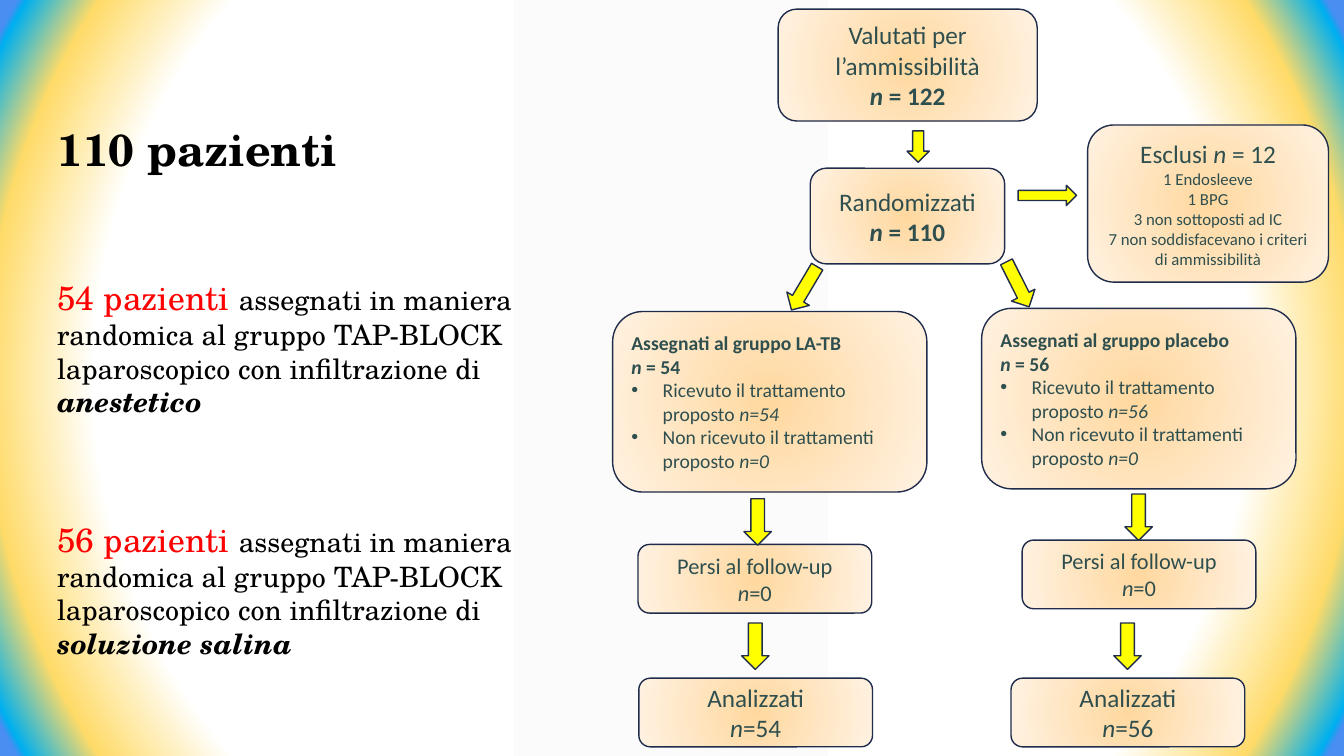
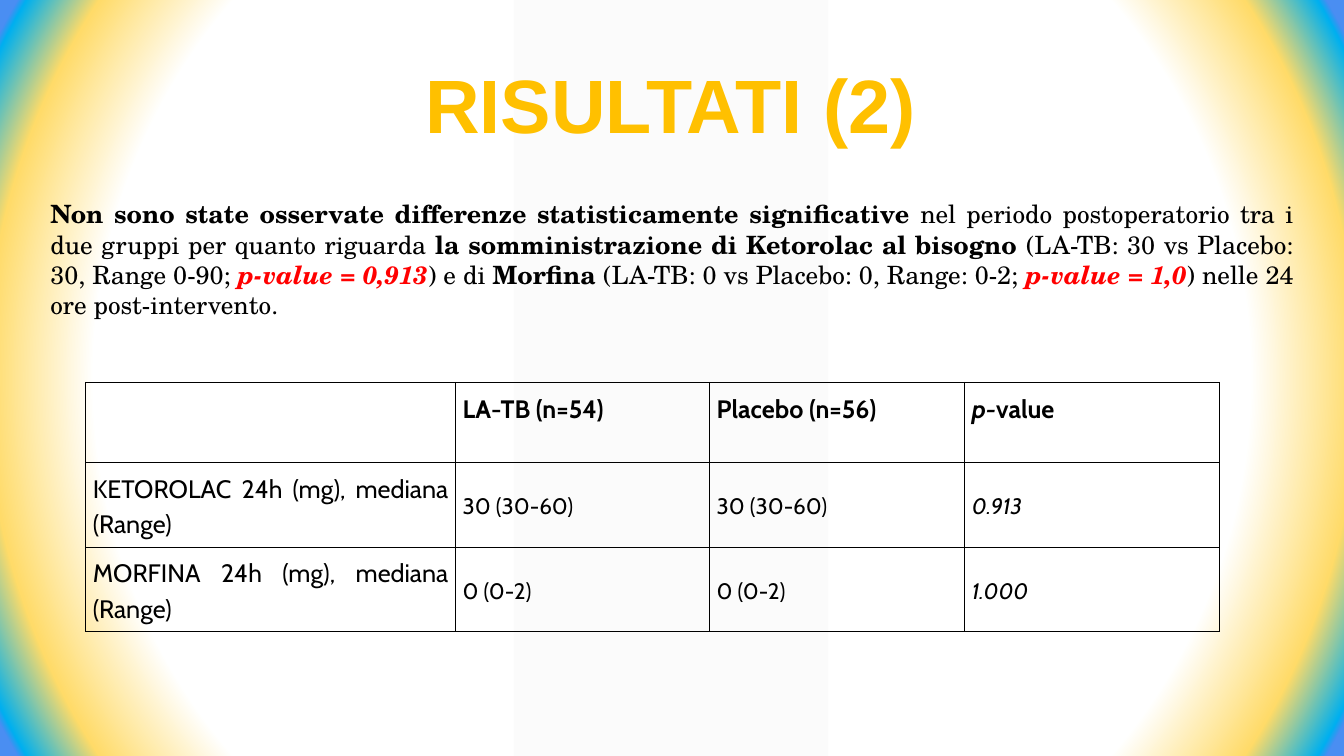
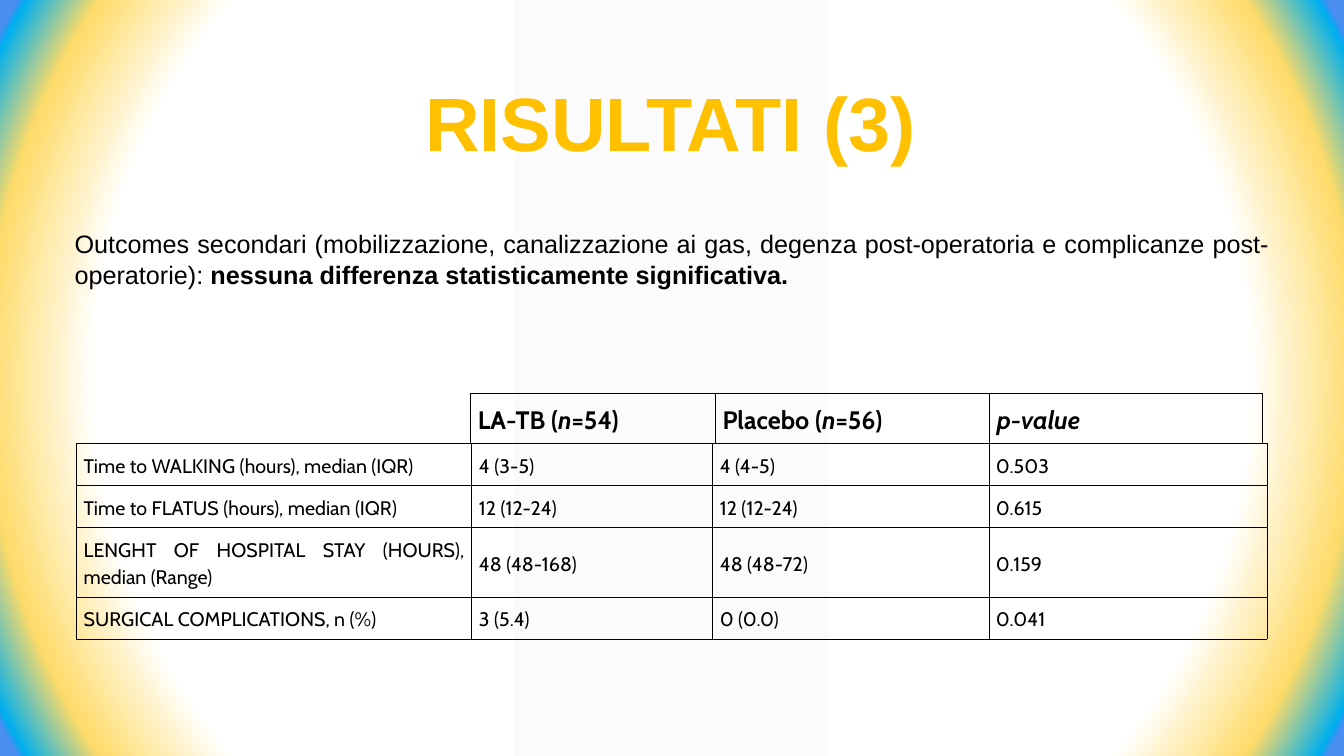
"""Build three slides on a randomised trial: patient flow and two result tables."""
from lxml.etree import SubElement
from pptx import Presentation
from pptx.dml.color import RGBColor
from pptx.enum.shapes import MSO_SHAPE
from pptx.enum.text import MSO_ANCHOR, MSO_AUTO_SIZE, PP_ALIGN
from pptx.oxml import parse_xml
from pptx.oxml.ns import nsdecls, qn
from pptx.util import Cm, Pt

HUES = {
    "black": "000000", "red": "FF0000", "gold": "FFC000", "slate": "2F4F4F",
    "navy": "202C4B", "yellow": "FFFF00", "pale": "F2F2F2", "white": "FFFFFF",
    "sand": "FFDB69", "sky": "00B0F0", "blue": "4A8EF2",
    "peach": "FFD89F", "cream": "FFF2E2",
}
SERIF, SANS, BODY, GRID = "TeX Gyre Schola", "Arial", "Calibri", "Cabin"
LEFT, MID, FULL = PP_ALIGN.LEFT, PP_ALIGN.CENTER, PP_ALIGN.JUSTIFY


def put(par, runs, size, face, hue):
    """Add runs of (text, marks): b bold, i italic, r red."""
    for text, marks in runs:
        run = par.add_run()
        run.text = text
        font = run.font
        font.name, font.size = face, Pt(size)
        font.bold, font.italic = "b" in marks, "i" in marks
        font.color.rgb = RGBColor.from_string(HUES["red" if "r" in marks else hue])


def glow(fill, node, stops):
    """Give a fill a round gradient with stops of (place, hue, alpha)."""
    fill.background()
    marks = "".join(
        f'<a:gs pos="{at * 1000}"><a:srgbClr val="{HUES[hue]}">'
        f'<a:alpha val="{alpha * 1000}"/></a:srgbClr></a:gs>'
        for at, hue, alpha in stops)
    node.replace(node.find(qn("a:noFill")), parse_xml(
        f'<a:gradFill {nsdecls("a")} rotWithShape="1"><a:gsLst>{marks}</a:gsLst>'
        '<a:path path="circle"><a:fillToRect l="50000" t="50000" r="50000" b="50000"/>'
        '</a:path></a:gradFill>'))


deck = Presentation()
deck.slide_width, deck.slide_height = Cm(33.87), Cm(19.05)
master = deck.slide_master
back = master.background.fill
glow(back, master.element.find(".//" + qn("p:bgPr")),
     [(75, "white", 100), (89, "sand", 57), (97, "sky", 100), (98, "blue", 100)])

pages = []
for text, face, size, hue, align, place in [
    ("110 pazienti", SERIF, 32, "black", LEFT, (1.19, 2.95, 12.4, 1.63)),
    ("RISULTATI (2)", SANS, 54, "gold", MID, (10.41, 1.32, 13, 2.57)),
    ("RISULTATI (3)", SANS, 54, "gold", MID, (10.41, 1.78, 13, 2.57)),
]:
    page = deck.slides.add_slide(deck.slide_layouts[5])
    head = page.shapes.title
    head.left, head.top, head.width, head.height = map(Cm, place)
    frame = head.text_frame
    frame.word_wrap, frame.auto_size = False, MSO_AUTO_SIZE.NONE
    frame.vertical_anchor = MSO_ANCHOR.TOP
    par = frame.paragraphs[0]
    par.alignment = align
    put(par, [(text, "b")], size, face, hue)
    pages.append(page)
flow, drugs, others = pages

band = flow.shapes.add_shape(MSO_SHAPE.PARALLELOGRAM, Cm(12.95), 0, Cm(7.92), deck.slide_height)
band.adjustments[0] = 0
band.shadow.inherit = False
band.line.fill.background()
band.fill.solid()
band.fill.fore_color.rgb = RGBColor.from_string(HUES["pale"])
tint = band.element.spPr.find(qn("a:solidFill"))[0]
SubElement(tint, qn("a:alpha")).set("val", "30000")
band.element.find(".//" + qn("p:cNvPr")).set("id", "99")
master.shapes.element.insert(2, band.element)

for top, count, fluid in [(6.86, "54", "anestetico"), (12.95, "56", "soluzione salina")]:
    note = flow.shapes.add_textbox(Cm(1.19), Cm(top), Cm(12.4), Cm(3.85))
    note.text_frame.word_wrap = True
    par = note.text_frame.paragraphs[0]
    put(par, [(f"{count} pazienti ", "r")], 24, SERIF, "black")
    put(par, [("assegnati in maniera randomica al gruppo TAP-BLOCK "
               "laparoscopico con infiltrazione di ", ""), (fluid, "bi")], 20, SERIF, "black")

boxes = [
    ((19.61, 0.23, 6.53, 2.82), MID, [
        (18, False, [("Valutati per l’ammissibilità", "")]),
        (18, False, [("n ", "bi"), ("= 122", "b")])]),
    ((20.42, 4.24, 4.9, 2.41), MID, [
        (18, False, [("Randomizzati", "")]),
        (18, False, [("n ", "bi"), ("= 110", "b")])]),
    ((27.41, 3.15, 6.07, 3.96), MID, [
        (18, False, [("Esclusi ", ""), ("n ", "i"), ("= 12", "")]),
        *[(12, False, [(text, "")]) for text in (
            "1 Endosleeve", "1 BPG", "3 non sottoposti ad IC",
            "7 non soddisfacevano i criteri di ammissibilità")]]),
]
for count, group, given, lost, done in [
    ("54", "LA-TB", (15.44, 7.85), (16.08, 13.72), (16.1, 17.09)),
    ("56", "placebo", (24.74, 7.77), (25.76, 13.61), (25.48, 17.09)),
]:
    boxes += [
        ((*given, 7.92, 4.55), LEFT, [
            (14, False, [(f"Assegnati al gruppo {group}", "b")]),
            (14, False, [("n ", "bi"), (f"= {count}", "b")]),
            (14, True, [("Ricevuto il trattamento proposto ", ""), (f"n={count}", "i")]),
            (14, True, [("Non ricevuto il trattamenti proposto ", ""), ("n=0", "i")])]),
        ((*lost, 5.89, 1.73), MID, [
            (16, False, [("Persi al follow-up", "")]),
            (16, False, [("n", "i"), ("=0", "")])]),
        ((*done, 5.89, 1.73), MID, [
            (18, False, [("Analizzati", "")]),
            (18, False, [("n", "i"), (f"={count}", "")])]),
    ]

for place, align, lines in boxes:
    box = flow.shapes.add_shape(MSO_SHAPE.FLOWCHART_ALTERNATE_PROCESS, *map(Cm, place))
    box.shadow.inherit = False
    glow(box.fill, box.element.spPr, [(0, "peach", 100), (100, "cream", 100)])
    box.line.color.rgb = RGBColor.from_string(HUES["navy"])
    box.line.width = Pt(1)
    frame = box.text_frame
    frame.word_wrap, frame.vertical_anchor = True, MSO_ANCHOR.MIDDLE
    for row, (size, dot, runs) in enumerate(lines):
        par = frame.add_paragraph() if row else frame.paragraphs[0]
        par.alignment = align
        put(par, runs, size, BODY, "slate")
        if dot:
            props = par._p.get_or_add_pPr()
            props.set("marL", str(Cm(0.79)))
            props.set("indent", str(-Cm(0.79)))
            SubElement(props, qn("a:buFont")).set("typeface", SANS)
            SubElement(props, qn("a:buChar")).set("char", "•")

for *place, turn in [
    (22.86, 3.3, 0.56, 0.79, 0),
    (26.14, 4.19, 0.51, 1.47, 270),
    (19.94, 6.63, 0.66, 1.27, 30.7),
    (25.32, 6.53, 0.66, 1.27, 333.3),
    (18.75, 12.57, 0.69, 1.17, 0),
    (28.35, 12.45, 0.69, 1.17, 0),
    (18.69, 15.7, 0.69, 1.17, 0),
    (28.07, 15.7, 0.69, 1.17, 0),
]:
    arrow = flow.shapes.add_shape(MSO_SHAPE.DOWN_ARROW, *map(Cm, place))
    arrow.shadow.inherit = False
    arrow.rotation = turn
    arrow.fill.solid()
    arrow.fill.fore_color.rgb = RGBColor.from_string(HUES["yellow"])
    arrow.line.color.rgb = RGBColor.from_string(HUES["navy"])
    arrow.line.width = Pt(1)

for page, place, face, runs in [
    (drugs, (1.02, 4.88, 31.83, 3.33), SERIF, [
        ("Non sono state osservate differenze statisticamente significative ", "b"),
        ("nel periodo postoperatorio tra i due gruppi per quanto riguarda ", ""),
        ("la somministrazione di Ketorolac al bisogno ", "b"),
        ("(LA-TB: 30 vs Placebo: 30, Range 0-90; ", ""),
        ("p-value = 0,913", "bir"), (") e di ", ""), ("Morfina ", "b"),
        ("(LA-TB: 0 vs Placebo: 0, Range: 0-2; ", ""),
        ("p-value = 1,0", "bir"), (") nelle 24 ore post-intervento.", "")]),
    (others, (1.63, 5.64, 30.61, 1.8), SANS, [
        ("Outcomes secondari (mobilizzazione, canalizzazione ai gas, degenza "
         "post-operatoria e complicanze post-operatorie): ", ""),
        ("nessuna differenza statisticamente significativa.", "b")]),
]:
    note = page.shapes.add_textbox(*map(Cm, place))
    note.text_frame.word_wrap = True
    par = note.text_frame.paragraphs[0]
    par.alignment = FULL
    put(par, runs, 18, face, "black")

TOP, CORE = MSO_ANCHOR.TOP, MSO_ANCHOR.MIDDLE
tables = [
    (drugs, 2.16, 9.63, (9.32, 6.4, 6.43, 6.43), [
        (2.02, TOP, [(18, []), (18, [("LA-TB (n=54)", "b")]),
                     (18, [("Placebo (n=56)", "b")]), (18, [("p-", "bi"), ("value", "b")])]),
        *[(2.13, CORE, [(18, [(name, "")]), (16, [(dose, "")]),
                        (16, [(dose, "")]), (16, [(prob, "i")])])
          for name, dose, prob in [
              ("KETOROLAC 24h (mg), mediana (Range)", "30 (30-60)", "0.913"),
              ("MORFINA 24h (mg), mediana (Range)", "0 (0-2)", "1.000")]]]),
    (others, 1.93, 11.18, (9.96, 6.07, 6.96, 7.01), [
        (high, CORE, [(14, [(text, "")]) for text in texts])
        for high, *texts in [
            (1.06, "Time to WALKING (hours), median (IQR)", "4 (3-5)", "4 (4-5)", "0.503"),
            (1.06, "Time to FLATUS (hours), median (IQR)", "12 (12-24)", "12 (12-24)", "0.615"),
            (1.74, "LENGHT OF HOSPITAL STAY (HOURS), median (Range)",
             "48 (48-168)", "48 (48-72)", "0.159"),
            (1.06, "SURGICAL COMPLICATIONS, n (%)", "3 (5.4)", "0 (0.0)", "0.041")]]),
    (others, 11.86, 9.91, (6.17, 6.91, 6.88), [
        (1.26, TOP, [(18, [("LA-TB (", "b"), ("n", "bi"), ("=54)", "b")]),
                     (18, [("Placebo (", "b"), ("n", "bi"), ("=56)", "b")]),
                     (18, [("p-value", "bi")])])]),
]
for page, left, top, wides, rows in tables:
    high = sum(row[0] for row in rows)
    table = page.shapes.add_table(
        len(rows), len(wides), Cm(left), Cm(top), Cm(sum(wides)), Cm(high)).table
    table.first_row = table.horz_banding = False
    for col, wide in zip(table.columns, wides):
        col.width = Cm(wide)
    for line, (high, anchor, cells) in zip(table.rows, rows):
        line.height = Cm(high)
        for cell, (size, runs) in zip(line.cells, cells):
            cell.margin_left = cell.margin_right = Cm(0.18)
            cell.margin_top = cell.margin_bottom = Cm(0.18)
            cell.vertical_anchor = anchor
            cell.fill.background()
            for spot, side in enumerate("LRTB"):
                cell._tc.tcPr.insert(spot, parse_xml(
                    f'<a:ln{side} {nsdecls("a")} w="{Pt(0.6)}"><a:solidFill>'
                    f'<a:srgbClr val="{HUES["black"]}"/></a:solidFill></a:ln{side}>'))
            par = cell.text_frame.paragraphs[0]
            par.alignment, par.line_spacing = FULL, 1.15
            put(par, runs, size, GRID, "black")

deck.save("out.pptx")
